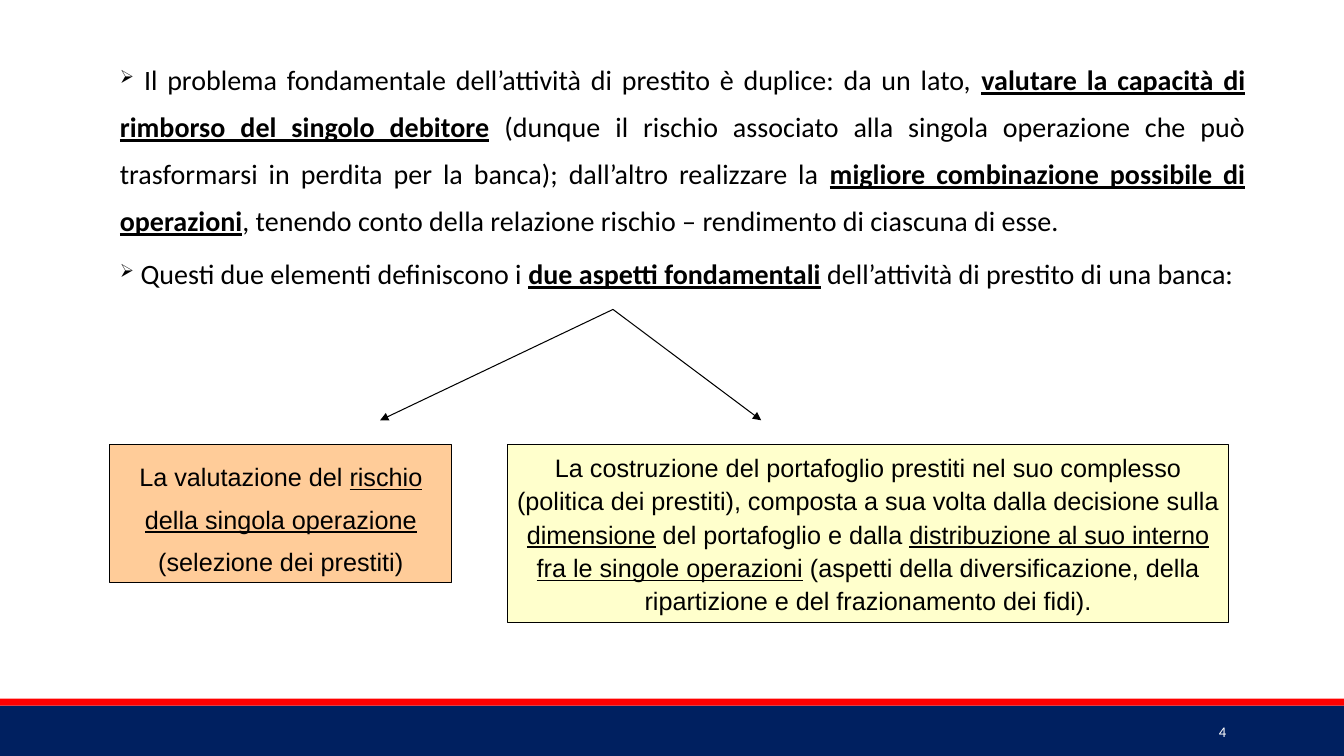
from lxml import etree
from pptx import Presentation
from pptx import util as u
from pptx.dml.color import RGBColor
from pptx.enum import shapes, text
from pptx.oxml.ns import qn

HUES = {"ink": "000000", "white": "FFFFFF", "navy": "002060", "red": "FF0000",
        "peach": "FFCC99", "cream": "FFFFCC"}
ALIGN = text.PP_ALIGN


class Deck:
    def __init__(self):
        self.prs = Presentation()
        self.prs.slide_width, self.prs.slide_height = u.Inches(13.33), u.Inches(7.5)
        self.page = self.prs.slides.add_slide(self.prs.slide_layouts[6])

    def place(self, x, y):
        return (int(self.prs.slide_width * x / 100),
                int(self.prs.slide_height * y / 100))

    def hue(self, name):
        return RGBColor.from_string(HUES[name])

    def bar(self, x, y, w, h, fill, line=None):
        box = self.page.shapes.add_shape(
            shapes.MSO_SHAPE.RECTANGLE, *self.place(x, y), *self.place(w, h))
        box.shadow.inherit = False
        box.fill.solid()
        box.fill.fore_color.rgb = self.hue(fill)
        if line:
            box.line.color.rgb = self.hue(line)
            box.line.width = u.Pt(0.75)
        else:
            box.line.fill.background()
        return box

    def area(self, x, y, w, h):
        return self.page.shapes.add_textbox(*self.place(x, y), *self.place(w, h))

    def label(self, box, paras, size, font, align, space=1, color="ink",
              bold=False, bullet=None, anchor=text.MSO_ANCHOR.TOP):
        frame = box.text_frame
        frame.word_wrap = True
        frame.vertical_anchor = anchor
        for i, parts in enumerate(paras):
            para = frame.add_paragraph() if i else frame.paragraphs[0]
            para.alignment = align
            para.line_spacing = space
            if i:
                para.space_before = u.Pt(size * 0.2)
            if bullet:
                self.mark(para, bullet)
            for n, part in enumerate(parts):
                run = para.add_run()
                run.text = part
                run.font.size, run.font.name = u.Pt(size), font
                run.font.color.rgb = self.hue(color)
                run.font.underline = n % 2 == 1
                run.font.bold = bold and n % 2 == 1

    def mark(self, para, sign):
        props = para._p.get_or_add_pPr()
        tint = etree.SubElement(props, qn("a:buClr"))
        etree.SubElement(tint, qn("a:srgbClr"), val=HUES["ink"])
        etree.SubElement(props, qn("a:buSzPct"), val="65000")
        etree.SubElement(props, qn("a:buChar"), char=sign)

    def arrow(self, start, end):
        line = self.page.shapes.add_connector(
            shapes.MSO_CONNECTOR.STRAIGHT, *self.place(*start), *self.place(*end))
        line.line.color.rgb = self.hue("ink")
        line.line.width = u.Pt(0.75)
        etree.SubElement(line.line._get_or_add_ln(), qn("a:tailEnd"), type="triangle")
        etree.SubElement(line._element.spPr, qn("a:effectLst"))


INTRO = [
    [" Il problema fondamentale dell’attività di prestito è duplice: da un lato, ",
     "valutare la capacità di rimborso del singolo debitore",
     " (dunque il rischio associato alla singola operazione che può trasformarsi in "
     "perdita per la banca); dall’altro realizzare la ",
     "migliore combinazione possibile di operazioni",
     ", tenendo conto della relazione rischio – rendimento di ciascuna di esse."],
    [" Questi due elementi definiscono i ", "due aspetti fondamentali",
     " dell’attività di prestito di una banca:"],
]
RISK = ["La valutazione del ", "rischio della singola operazione",
        " (selezione dei prestiti)"]
LOANS = ["La costruzione del portafoglio prestiti nel suo complesso (politica dei "
         "prestiti), composta a sua volta dalla decisione sulla ",
         "dimensione", " del portafoglio e dalla ",
         "distribuzione al suo interno fra le singole operazioni",
         " (aspetti della diversificazione, della ripartizione e del frazionamento "
         "dei fidi)."]
LEFT, TOP = 8.18, 58.8
FORK, TIP = (45.61, 40.93), 55.6


def main():
    deck = Deck()
    deck.bar(0, 93.33, 100, 6.67, "navy")
    deck.bar(0, 92.4, 100, 0.93, "red")
    deck.label(deck.area(81.25, 94.13, 10.73, 5.33), [["4"]], 10.5, "Calibri",
               ALIGN.RIGHT, color="white", anchor=text.MSO_ANCHOR.MIDDLE)
    deck.label(deck.area(LEFT, 5.87, 85.22, 52.53), INTRO, 20, "Calibri",
               ALIGN.JUSTIFY, space=1.4, bold=True, bullet="➢")
    for x, w, h, fill, space, words in (
            (LEFT, 25.43, 18.27, "peach", 1.4, RISK),
            (37.73, 53.71, 23.6, "cream", 1.1, LOANS)):
        deck.label(deck.bar(x, TOP, w, h, fill, "ink"), [words], 18, "Arial",
                   ALIGN.CENTER, space=space)
    for x in (28.28, 56.64):
        deck.arrow(FORK, (x, TIP))
    deck.prs.save("out.pptx")


if __name__ == "__main__":
    main()
